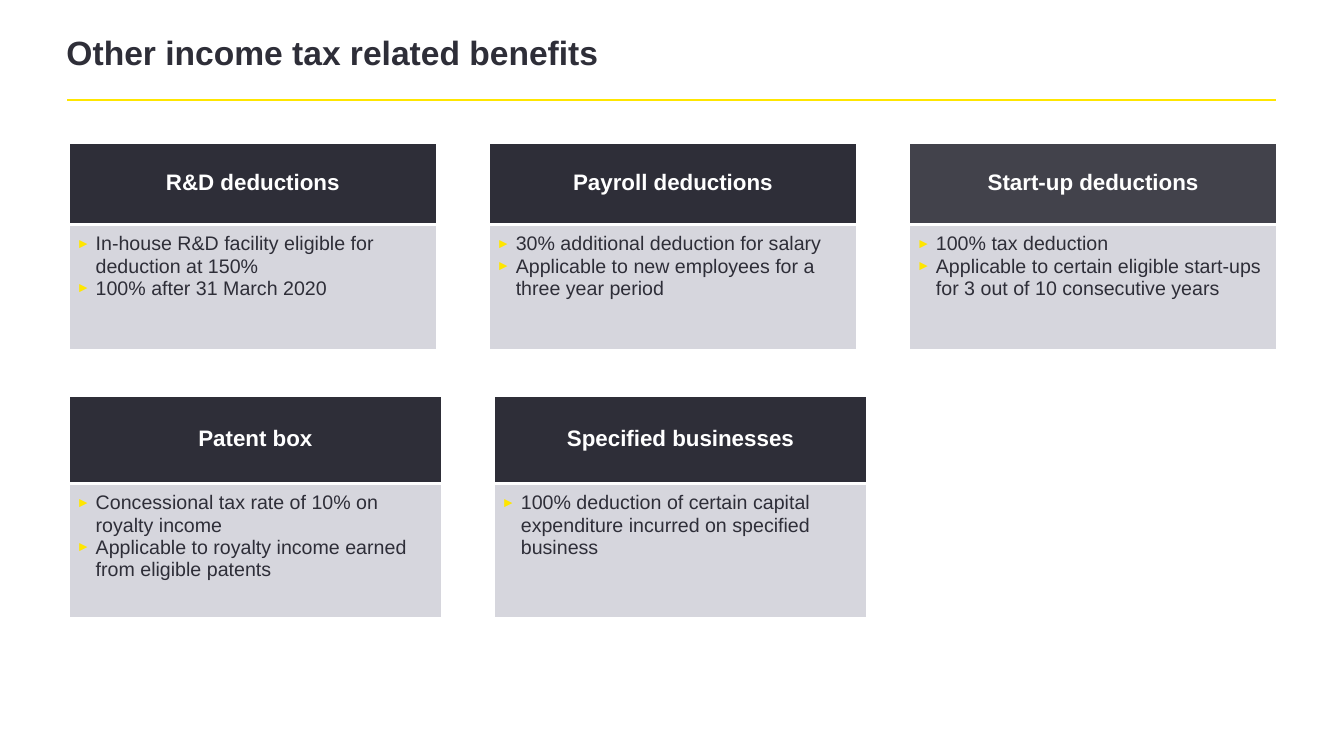
from lxml import etree
from pptx import Presentation
from pptx.dml.color import RGBColor
from pptx.enum.shapes import MSO_CONNECTOR, MSO_SHAPE
from pptx.enum.text import MSO_ANCHOR, MSO_AUTO_SIZE, PP_ALIGN
from pptx.oxml.ns import qn
from pptx.util import Inches, Pt

RECT = MSO_SHAPE.RECTANGLE
STRAIGHT = MSO_CONNECTOR.STRAIGHT
TOP, MIDDLE = MSO_ANCHOR.TOP, MSO_ANCHOR.MIDDLE
LEFT, CENTER = PP_ALIGN.LEFT, PP_ALIGN.CENTER
NO_AUTOFIT = MSO_AUTO_SIZE.NONE

FONT = "Arial"
COLORS = {"dark": "2E2E38", "panel": "D2D2DA", "yellow": "FFE600", "white": "FFFFFF"}
CARD_LEFT = 0.68

# Each row: top, card width, column pitch, header height, body height, cards
ROWS = [
    (1.41, 3.66, 4.17, 0.82, 1.25, [
        ("R&D deductions", ["In-house R&D facility eligible for deduction at 150%",
                            "100% after 31 March 2020"]),
        ("Payroll deductions", ["30% additional deduction for salary",
                                "Applicable to new employees for a three year period"]),
        ("Start-up deductions", ["100% tax deduction",
                                 "Applicable to certain eligible start-ups "
                                 "for 3 out of 10 consecutive years"]),
    ]),
    (3.92, 3.71, 4.22, 0.88, 1.34, [
        ("Patent box", ["Concessional tax rate of 10% on royalty income",
                        "Applicable to royalty income earned from eligible patents"]),
        ("Specified businesses", ["100% deduction of certain capital expenditure "
                                  "incurred on specified business"]),
    ]),
]
TRANSLUCENT_HEADERS = {"Start-up deductions"}


def rgb(name):
    return RGBColor.from_string(COLORS[name])


def add_bullet(p):
    pPr = p._p.get_or_add_pPr()
    pPr.set("marL", str(Inches(0.19)))
    pPr.set("indent", str(-Inches(0.19)))
    bu_color = etree.SubElement(pPr, qn("a:buClr"))
    etree.SubElement(bu_color, qn("a:srgbClr"), val=COLORS["yellow"])
    etree.SubElement(pPr, qn("a:buSzPct"), val="70000")
    etree.SubElement(pPr, qn("a:buFont"), typeface=FONT)
    etree.SubElement(pPr, qn("a:buChar"), char="►")


def set_text(sp, lines, size, color="dark", bold=False, align=LEFT, anchor=TOP,
             spacing=1.0, insets=(0, 0, 0, 0), bullets=False):
    """Fill a shape with paragraphs; insets are left, top, right, bottom in inches."""
    tf = sp.text_frame
    tf.word_wrap = True
    tf.auto_size = NO_AUTOFIT
    tf.vertical_anchor = anchor
    tf.margin_left, tf.margin_top, tf.margin_right, tf.margin_bottom = map(Inches, insets)
    for i, line in enumerate(lines):
        p = tf.add_paragraph() if i else tf.paragraphs[0]
        p.alignment = align
        p.line_spacing = spacing
        p.space_before = Pt(0)
        if bullets:
            add_bullet(p)
        r = p.add_run()
        r.text = line
        r.font.name = FONT
        r.font.size = Pt(size)
        r.font.bold = bold
        r.font.color.rgb = rgb(color)


def add_box(slide, x, y, w, h, fill, translucent=False):
    sp = slide.shapes.add_shape(RECT, Inches(x), Inches(y), Inches(w), Inches(h))
    sp.shadow.inherit = False
    sp.fill.solid()
    sp.fill.fore_color.rgb = rgb(fill)
    sp.line.color.rgb = rgb("white")
    sp.line.width = Pt(2)
    if translucent:
        color = sp._element.spPr.find(qn("a:solidFill")).find(qn("a:srgbClr"))
        etree.SubElement(color, qn("a:alpha"), val="90000")
    return sp


def add_card(slide, x, y, w, header_h, body_h, heading, points):
    header = add_box(slide, x, y, w, header_h, "dark", heading in TRANSLUCENT_HEADERS)
    set_text(header, [heading], 16, color="white", bold=True, align=CENTER,
             anchor=MIDDLE, spacing=0.9, insets=(0.12, 0.07, 0.12, 0.07))
    body = add_box(slide, x, y + header_h, w, body_h, "panel", translucent=True)
    set_text(body, points, 14, spacing=0.95, insets=(0.08, 0.08, 0.11, 0.12),
             bullets=True)


def add_title(slide, text):
    title = slide.shapes.title
    title.left, title.top = Inches(0.66), Inches(0.38)
    title.width, title.height = Inches(9), Inches(0.63)
    set_text(title, [text], 24, bold=True, spacing=0.85)


def add_rule(slide):
    line = slide.shapes.add_connector(STRAIGHT, Inches(0.67), Inches(0.99),
                                      Inches(12.67), Inches(0.99))
    line.line.color.rgb = rgb("yellow")
    line.line.width = Pt(1.5)
    etree.SubElement(line._element.spPr, qn("a:effectLst"))


def main():
    prs = Presentation()
    prs.slide_width, prs.slide_height = Inches(13.34), Inches(7.5)
    slide = prs.slides.add_slide(prs.slide_layouts.get_by_name("Title Only"))
    add_rule(slide)
    add_title(slide, "Other income tax related benefits")
    for top, width, pitch, header_h, body_h, cards in ROWS:
        for col, (heading, points) in enumerate(cards):
            add_card(slide, CARD_LEFT + col * pitch, top, width, header_h, body_h,
                     heading, points)
    prs.save("out.pptx")


if __name__ == "__main__":
    main()
